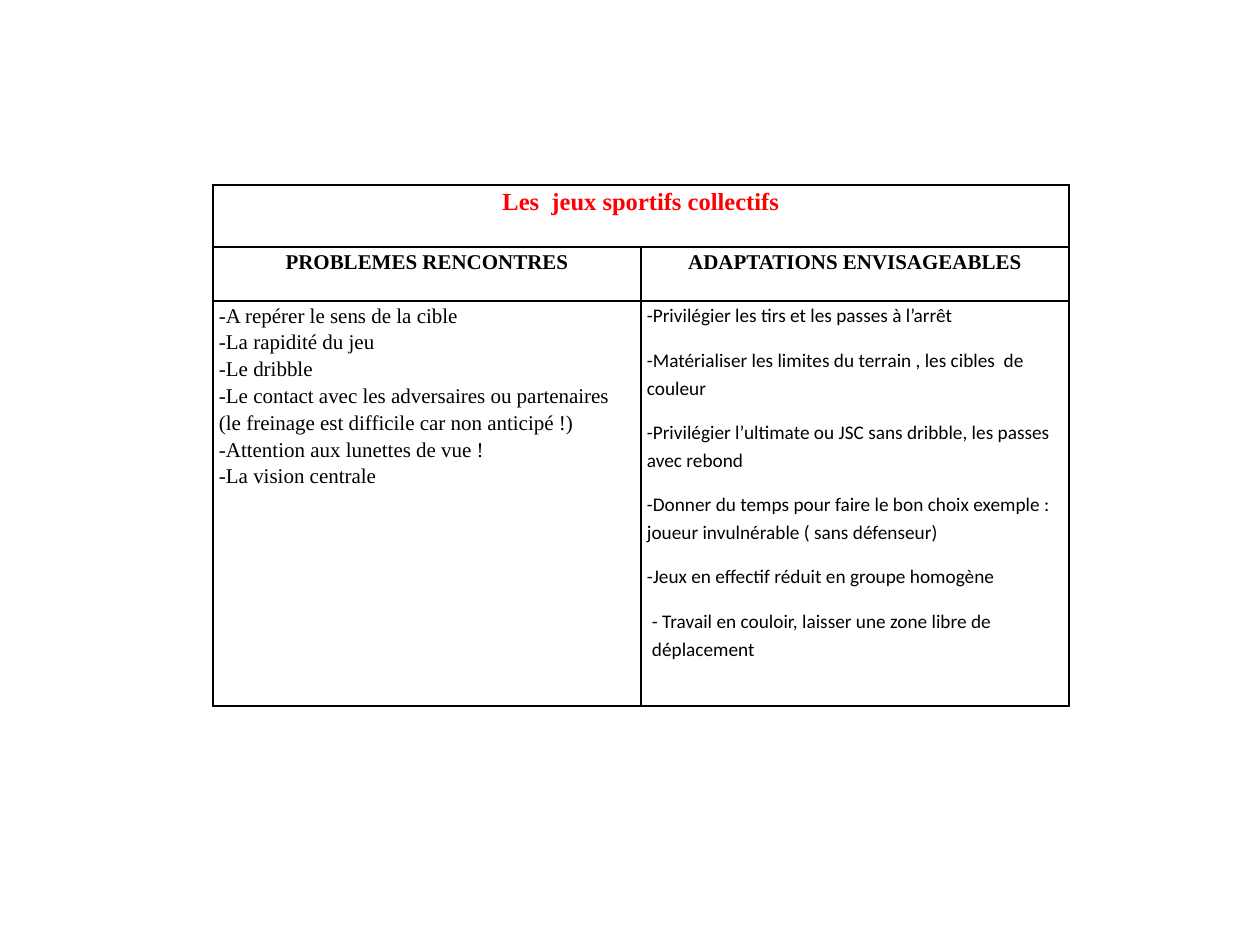
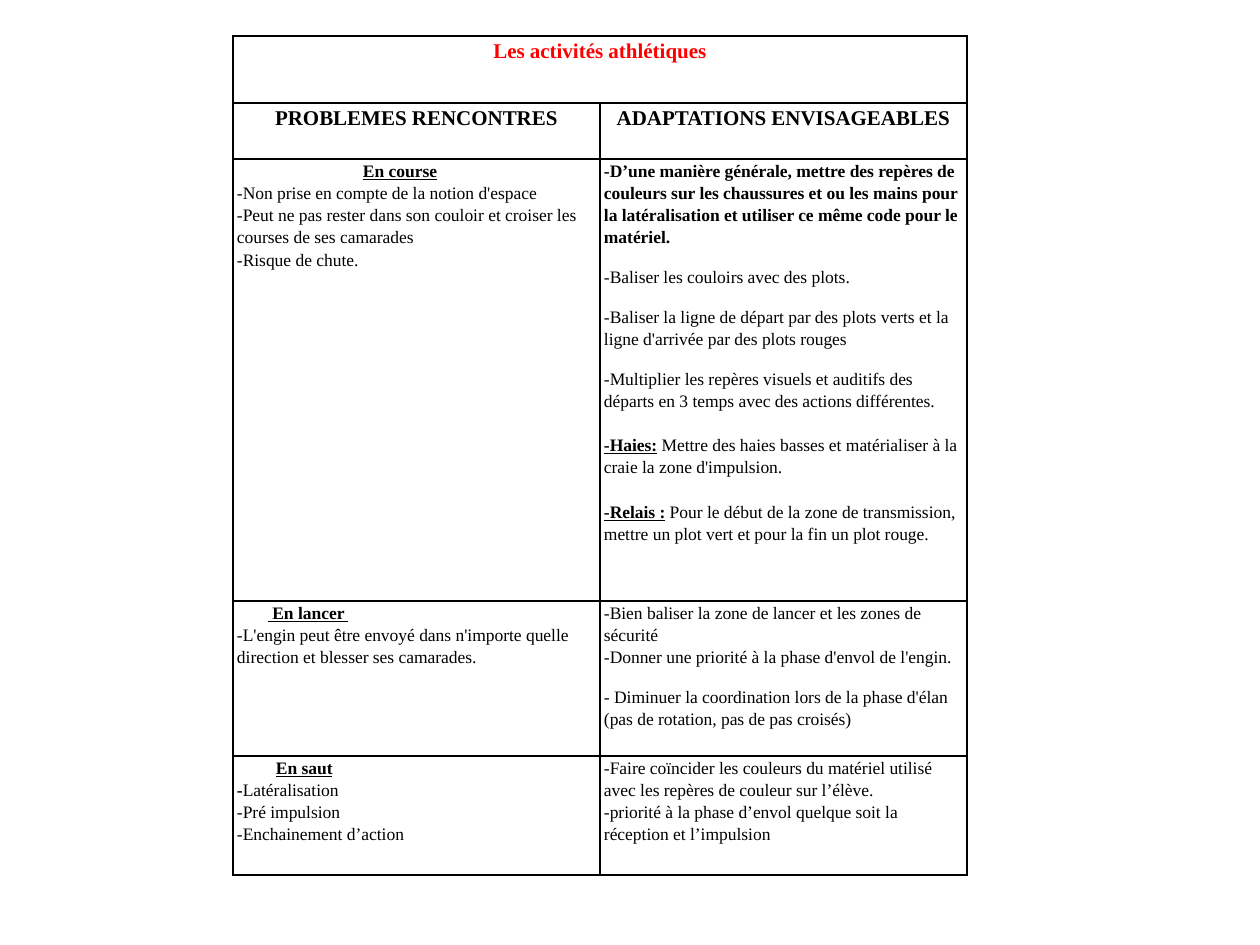
import pptx
import pptx.dml.color
import pptx.enum.text
import pptx.oxml
import pptx.oxml.ns
import pptx.util
from dataclasses import dataclass

PX = 914400 / 126  # EMU in one px


@dataclass(frozen=True)
class Theme:
    ink: str = "000000"
    title: str = "FF0000"
    serif: str = "Times New Roman"
    sans: str = "Calibri"
    big: int = 14
    head: int = 12
    medium: int = 11
    small: int = 10
    leading: float = 1.15
    gap: int = 10  # points after a separated item
    blank_line: float = 12.7  # points, one line of small text
    border: int = 1


THEME = Theme()
CENTER = pptx.enum.text.PP_ALIGN.CENTER
HEADINGS = ("PROBLEMES RENCONTRES", "ADAPTATIONS ENVISAGEABLES")


def px(length):
    return pptx.util.Emu(round(length * PX))


# Content helpers: a line is its spans plus paragraph format
def line(*spans, **layout):
    return spans, layout


def spaced(*spans, **layout):
    return line(*spans, after=THEME.gap, **layout)


def strong(text):
    return text, {"bold": True}


def label(text):
    return text, {"bold": True, "underline": True}


# Text
def add_span(para, text, *, size, font=THEME.serif, color=THEME.ink,
             bold=False, underline=False):
    span = para.add_run()
    span.text = text
    span.font.name = font
    span.font.size = pptx.util.Pt(size)
    span.font.bold = bold
    span.font.underline = underline
    span.font.color.rgb = pptx.dml.color.RGBColor.from_string(color)


def write_line(para, spans, *, align=None, after=0, indent=0, **style):
    para.alignment = align
    para.line_spacing = THEME.leading
    para.space_after = pptx.util.Pt(after)
    if indent:
        para._p.get_or_add_pPr().set("marL", str(px(indent)))
    for span in spans:
        text, own_style = (span, {}) if isinstance(span, str) else span
        add_span(para, text, **{**style, **own_style})


def write_cell(cell, lines, **style):
    frame = cell.text_frame
    for index, (spans, layout) in enumerate(lines):
        para = frame.add_paragraph() if index else frame.paragraphs[0]
        write_line(para, spans, **{**style, **layout})


# Table
def frame_cell(cell, margin):
    cell.margin_left = cell.margin_right = px(margin)
    cell.margin_top = cell.margin_bottom = 0
    cell.fill.background()
    properties = cell._tc.get_or_add_tcPr()
    for index, side in enumerate(("lnL", "lnR", "lnT", "lnB")):
        properties.insert(index, pptx.oxml.parse_xml(
            f'<a:{side} {pptx.oxml.ns.nsdecls("a")} w="{pptx.util.Pt(THEME.border)}">'
            f'<a:solidFill><a:srgbClr val="{THEME.ink}"/></a:solidFill></a:{side}>'))


def add_activity_table(page, title, rows, *, left, top, column, heights,
                       margin, title_size, body_styles):
    box = page.shapes.add_table(len(heights), 2, px(left), px(top),
                                px(2 * column), px(sum(heights)))
    table = box.table
    table.first_row = table.horz_banding = False
    for table_column in table.columns:
        table_column.width = px(column)
    for table_row, height in zip(table.rows, heights):
        table_row.height = px(height)
    for cell in table.iter_cells():
        frame_cell(cell, margin)

    # Title and headings
    table.cell(0, 0).merge(table.cell(0, 1))
    write_cell(table.cell(0, 0), [line(title)], align=CENTER,
               size=title_size, color=THEME.title, bold=True)
    for index, heading in enumerate(HEADINGS):
        write_cell(table.cell(1, index), [line(heading)], align=CENTER,
                   size=THEME.head, bold=True)

    # Problems and adaptations
    for row_index, row in enumerate(rows, start=2):
        for index, (lines, style) in enumerate(zip(row, body_styles)):
            write_cell(table.cell(row_index, index), lines, **style)


TEAM_GAMES = [(
    [line("-A repérer le sens de la cible"),
     line("-La rapidité du jeu"),
     line("-Le dribble"),
     line("-Le contact avec les adversaires ou partenaires "
          "(le freinage est difficile car non anticipé !)"),
     line("-Attention aux lunettes de vue !"),
     line("-La vision centrale")],
    [spaced("-Privilégier les tirs et les passes à l’arrêt"),
     spaced("-Matérialiser les limites du terrain , les cibles  de couleur"),
     spaced("-Privilégier l’ultimate ou JSC sans dribble, les passes avec rebond"),
     spaced("-Donner du temps pour faire le bon choix exemple : "
            "joueur invulnérable ( sans défenseur)"),
     spaced("-Jeux en effectif réduit en groupe homogène"),
     spaced("- Travail en couloir, laisser une zone libre de déplacement",
            indent=5)],
)]

ATHLETICS = [
    ([line(label("En course"), indent=126),
      line("-Non prise en compte de la notion d'espace"),
      line("-Peut ne pas rester dans son couloir et croiser les courses "
           "de ses camarades"),
      line("-Risque de chute.")],
     [spaced(strong("-D’une manière générale, mettre des repères de couleurs "
                    "sur les chaussures et ou les mains pour la latéralisation "
                    "et utiliser ce même code pour le matériel.")),
      spaced("-Baliser les couloirs avec des plots."),
      spaced("-Baliser la ligne de départ par des plots verts et la ligne "
             "d'arrivée par des plots rouges"),
      line("-Multiplier les repères visuels et auditifs des départs en 3 temps "
           "avec des actions différentes.", after=THEME.blank_line),
      line(label("-Haies:"), " Mettre des haies basses et matérialiser à la "
           "craie la zone d'impulsion.", after=THEME.blank_line),
      line(label("-Relais :"), " Pour le début de la zone de transmission, "
           "mettre un plot vert et pour la fin un plot rouge.")]),
    ([line(label(" En lancer "), indent=31),
      line("-L'engin peut être envoyé dans n'importe quelle direction "
           "et blesser ses camarades.")],
     [line("-Bien baliser la zone de lancer et les zones de sécurité"),
      spaced("-Donner une priorité à la phase d'envol de l'engin."),
      spaced("- Diminuer la coordination lors de la phase d'élan "
             "(pas de rotation, pas de pas croisés)")]),
    ([line(label("En saut"), indent=39),
      line(strong("-"), "Latéralisation"),
      line("-Pré impulsion"),
      line("-Enchainement d’action")],
     [line("-Faire coïncider les couleurs du matériel utilisé avec les "
           "repères de couleur sur l’élève."),
      line("-priorité à la phase d’envol quelque soit la réception "
           "et l’impulsion")]),
]


def main():
    deck = pptx.Presentation()
    deck.slide_width, deck.slide_height = px(1260), px(945)
    blank = deck.slide_layouts[6]

    # Team games
    add_activity_table(
        deck.slides.add_slide(blank), "Les  jeux sportifs collectifs", TEAM_GAMES,
        left=213, top=185, column=428, heights=(62, 54, 405), margin=6,
        title_size=THEME.big,
        body_styles=({"size": THEME.head},
                     {"size": THEME.medium, "font": THEME.sans}))

    # Athletics
    add_activity_table(
        deck.slides.add_slide(blank), "Les activités athlétiques", ATHLETICS,
        left=233, top=36, column=367, heights=(67, 56, 442, 155, 119), margin=4,
        title_size=THEME.head, body_styles=({"size": THEME.small},) * 2)

    deck.save("out.pptx")


if __name__ == "__main__":
    main()
